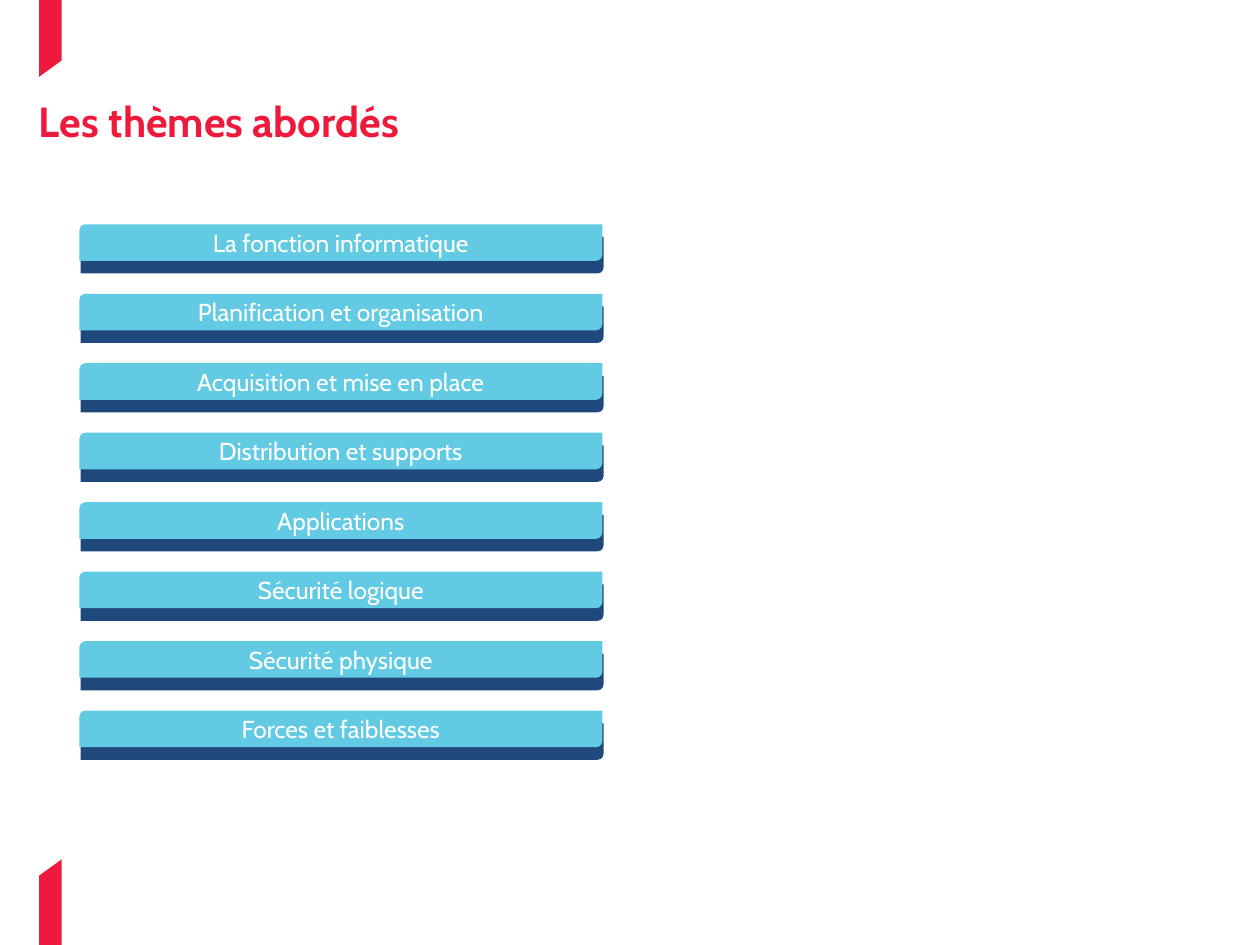
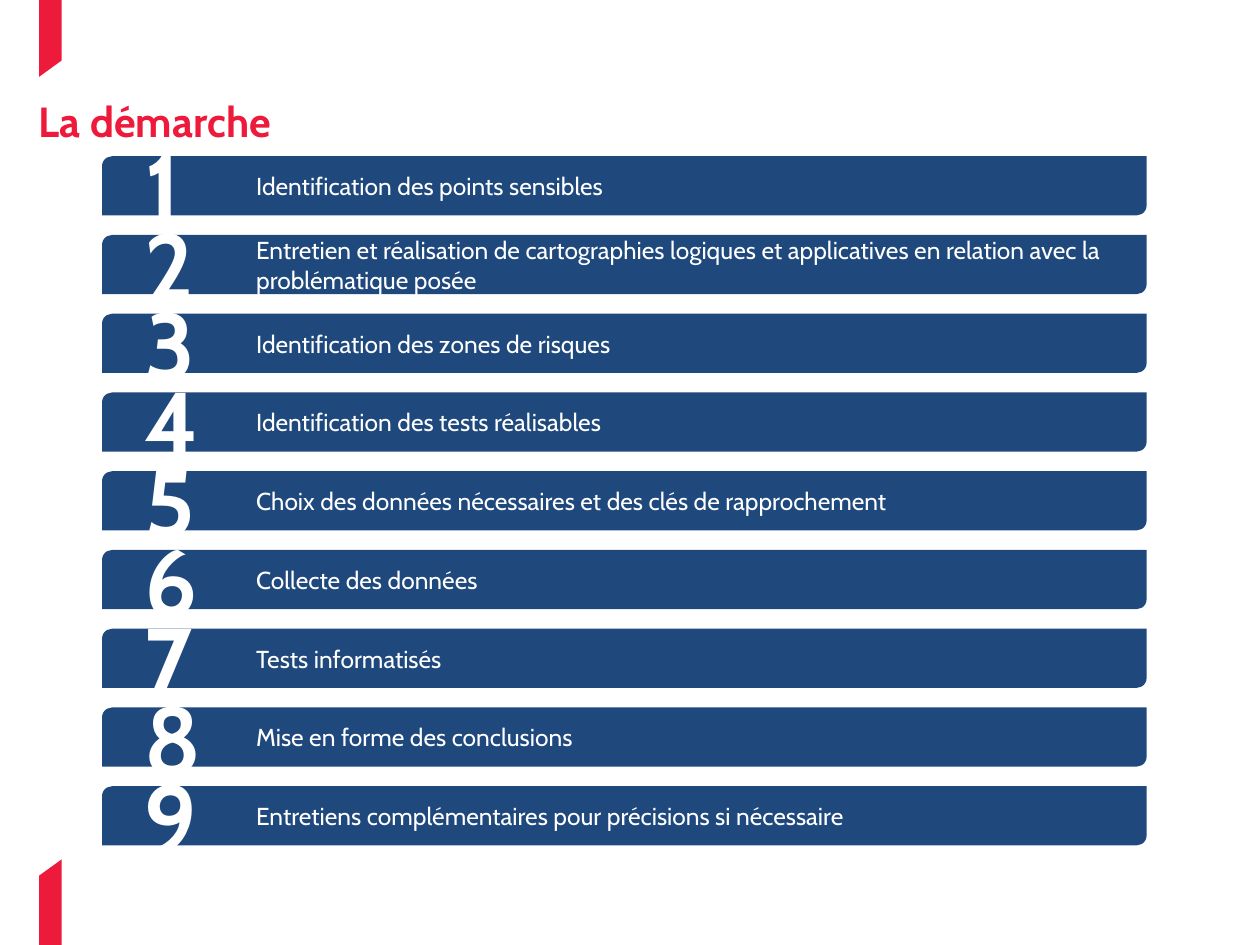
import pptx
import pptx.util
import pptx.dml.color
import pptx.enum.shapes
import pptx.enum.text

Inches = pptx.util.Inches
Align = pptx.enum.text.PP_ALIGN
Anchor = pptx.enum.text.MSO_ANCHOR

RED, NAVY, SKY, WHITE = "ED1A3B", "1F497D", "62CAE3", "FFFFFF"
FONT = "Cabin"

THEMES = [
    "La fonction informatique",
    "Planification et organisation",
    "Acquisition et mise en place",
    "Distribution et supports",
    "Applications",
    "Sécurité logique",
    "Sécurité physique",
    "Forces et faiblesses",
]
STEPS = [
    "Identification des points sensibles",
    "Entretien et réalisation de cartographies logiques et applicatives "
    "en relation avec la problématique posée",
    "Identification des zones de risques",
    "Identification des tests réalisables",
    "Choix des données nécessaires et des clés de rapprochement",
    "Collecte des données",
    "Tests informatisés",
    "Mise en forme des conclusions",
    "Entretiens complémentaires pour précisions si nécessaire",
]


def color(code):
    return pptx.dml.color.RGBColor.from_string(code)


def paint(shape, code):
    shape.shadow.inherit = False
    shape.fill.solid()
    shape.fill.fore_color.rgb = color(code)
    shape.line.fill.background()


def write(shape, text, size, code, bold=False, align=Align.LEFT, anchor=Anchor.TOP, inset=0, indent=0):
    frame = shape.text_frame
    frame.word_wrap = True
    frame.vertical_anchor = anchor
    frame.margin_left = frame.margin_right = Inches(inset)
    frame.margin_top = frame.margin_bottom = Inches(inset / 2)
    frame.text = text
    para = frame.paragraphs[0]
    para.alignment = align
    if indent:
        props = para._p.get_or_add_pPr()
        props.set("marL", str(Inches(indent)))
        props.set("indent", "0")
    font = para.runs[0].font
    font.name, font.size, font.bold = FONT, pptx.util.Pt(size), bold
    font.color.rgb = color(code)
    return para


def text_box(slide, box):
    return slide.shapes.add_textbox(*map(Inches, box))


def bar(slide, box, code):
    kind = pptx.enum.shapes.MSO_SHAPE.ROUND_2_DIAG_RECTANGLE
    shape = slide.shapes.add_shape(kind, *map(Inches, box))
    paint(shape, code)
    return shape


def ribbon(slide, points):
    first, *rest = [(Inches(x), Inches(y)) for x, y in points]
    path = slide.shapes.build_freeform(*first)
    path.add_line_segments(rest, close=True)
    paint(path.convert_to_shape(), RED)


def rows(box, high, count):
    left, top, wide, tall = box
    step = (tall - high) / (count - 1)
    return [(left, top + i * step, wide, high) for i in range(count)]


def base_slide(deck, title):
    slide = deck.slides.add_slide(deck.slide_layouts[6])
    left, right = 0.31, 0.49
    ribbon(slide, [(left, 0), (right, 0), (right, 0.48), (left, 0.61)])
    ribbon(slide, [(left, 7.5), (right, 7.5), (right, 6.82), (left, 6.95)])
    para = write(text_box(slide, (left, 0.74, 9.37, 1.06)), title, 24, RED, bold=True)
    para.line_spacing = 1.05
    return slide


def theme_list(slide, box):
    for text, (left, top, wide, high) in zip(THEMES, rows(box, 0.29, len(THEMES))):
        bar(slide, (left + 0.01, top + 0.1, wide, high), NAVY)
        front = bar(slide, (left, top, wide, high), SKY)
        write(front, text, 14, WHITE, align=Align.CENTER, anchor=Anchor.MIDDLE)


def step_list(slide, box):
    spots = rows(box, 0.47, len(STEPS))
    for text, spot in zip(STEPS, spots):
        write(bar(slide, spot, NAVY), text, 14, WHITE, anchor=Anchor.MIDDLE, indent=1.2)
    for num, (left, top, _, _) in enumerate(spots, 1):
        digit = text_box(slide, (left + 0.24, top - 0.27, 0.49, 1.01))
        write(digit, str(num), 54, WHITE, bold=True, align=Align.CENTER, inset=0.1)


def main():
    deck = pptx.Presentation()
    deck.slide_width, deck.slide_height = Inches(10), Inches(7.5)
    theme_list(base_slide(deck, "Les thèmes abordés"), (0.63, 1.78, 4.15, 4.15))
    step_list(base_slide(deck, "La démarche"), (0.81, 1.24, 8.29, 5.47))
    deck.save("out.pptx")


if __name__ == "__main__":
    main()
